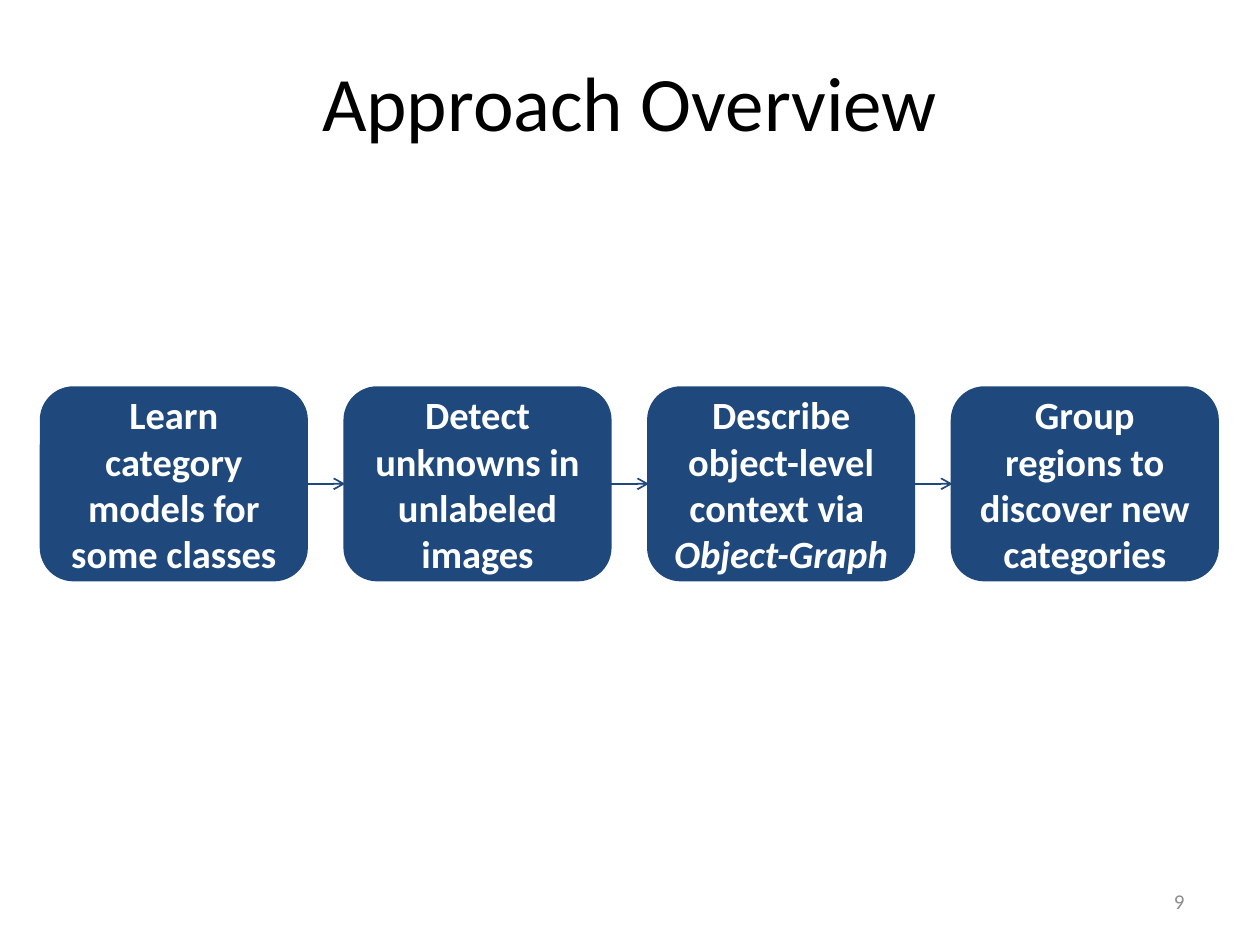
from lxml import etree
from pptx import Presentation
from pptx.dml.color import RGBColor
from pptx.enum.shapes import MSO_CONNECTOR, MSO_SHAPE
from pptx.enum.text import MSO_ANCHOR, PP_ALIGN
from pptx.oxml.ns import qn
from pptx.util import Inches, Pt

CENTER, RIGHT = PP_ALIGN.CENTER, PP_ALIGN.RIGHT
MIDDLE = MSO_ANCHOR.MIDDLE
ROUNDED = MSO_SHAPE.ROUNDED_RECTANGLE
STRAIGHT = MSO_CONNECTOR.STRAIGHT
LEFT_SIDE, RIGHT_SIDE = 1, 3

NAVY = RGBColor(0x1F, 0x49, 0x7D)
WHITE = RGBColor(0xFF, 0xFF, 0xFF)
BLACK = RGBColor(0x00, 0x00, 0x00)
GRAY = RGBColor(0x8C, 0x8C, 0x8C)
FONT = "Calibri"

# Row of steps, in inches
FIRST_LEFT, ROW_TOP, COLUMN_PITCH = 0.33, 3.08, 2.41
STEP_WIDTH, STEP_HEIGHT = 2.1, 1.52

# Each step is a list of (paragraph, italic)
STEPS = [
    [("Learn category models for some classes", False)],
    [("Detect unknowns in unlabeled images", False)],
    [("Describe object-level context via ", False), ("Object-Graph", True)],
    [("Group regions to discover new categories", False)],
]


def write_text(shape, paragraphs, *, size, color, bold=False, align=CENTER):
    """Fill a shape with (text, italic) paragraphs in one format."""
    frame = shape.text_frame
    frame.word_wrap = True
    frame.vertical_anchor = MIDDLE
    for index, (text, italic) in enumerate(paragraphs):
        paragraph = frame.add_paragraph() if index else frame.paragraphs[0]
        paragraph.alignment = align
        run = paragraph.add_run()
        run.text = text
        run.font.name = FONT
        run.font.size = Pt(size)
        run.font.bold = bold
        run.font.italic = italic
        run.font.color.rgb = color


def add_label(slide, text, left, top, width, height, **text_format):
    box = slide.shapes.add_textbox(
        Inches(left), Inches(top), Inches(width), Inches(height))
    write_text(box, [(text, False)], **text_format)


def add_step(slide, column, paragraphs):
    left = FIRST_LEFT + column * COLUMN_PITCH
    step = slide.shapes.add_shape(
        ROUNDED, Inches(left), Inches(ROW_TOP),
        Inches(STEP_WIDTH), Inches(STEP_HEIGHT))
    step.shadow.inherit = False
    step.fill.solid()
    step.fill.fore_color.rgb = NAVY
    step.line.color.rgb = NAVY
    step.line.width = Pt(2)
    write_text(step, paragraphs, size=22, color=WHITE, bold=True)
    return step


def add_arrow(slide, source, target):
    arrow = slide.shapes.add_connector(STRAIGHT, 0, 0, 0, 0)
    arrow.begin_connect(source, RIGHT_SIDE)
    arrow.end_connect(target, LEFT_SIDE)
    arrow.line.color.rgb = NAVY
    arrow.line.width = Pt(1)
    properties = arrow.element.spPr
    etree.SubElement(properties.find(qn("a:ln")), qn("a:tailEnd"), type="arrow")
    etree.SubElement(properties, qn("a:effectLst"))


def main():
    presentation = Presentation()
    presentation.slide_width = Inches(10)
    presentation.slide_height = Inches(7.5)
    slide = presentation.slides.add_slide(presentation.slide_layouts[6])

    add_label(slide, "Approach Overview", 0.5, 0.17, 9, 1.25,
              size=44, color=BLACK)
    add_label(slide, "9", 7.17, 6.95, 2.33, 0.4,
              size=12, color=GRAY, align=RIGHT)

    steps = [add_step(slide, column, paragraphs)
             for column, paragraphs in enumerate(STEPS)]
    for source, target in zip(steps, steps[1:]):
        add_arrow(slide, source, target)

    presentation.save("out.pptx")


if __name__ == "__main__":
    main()
